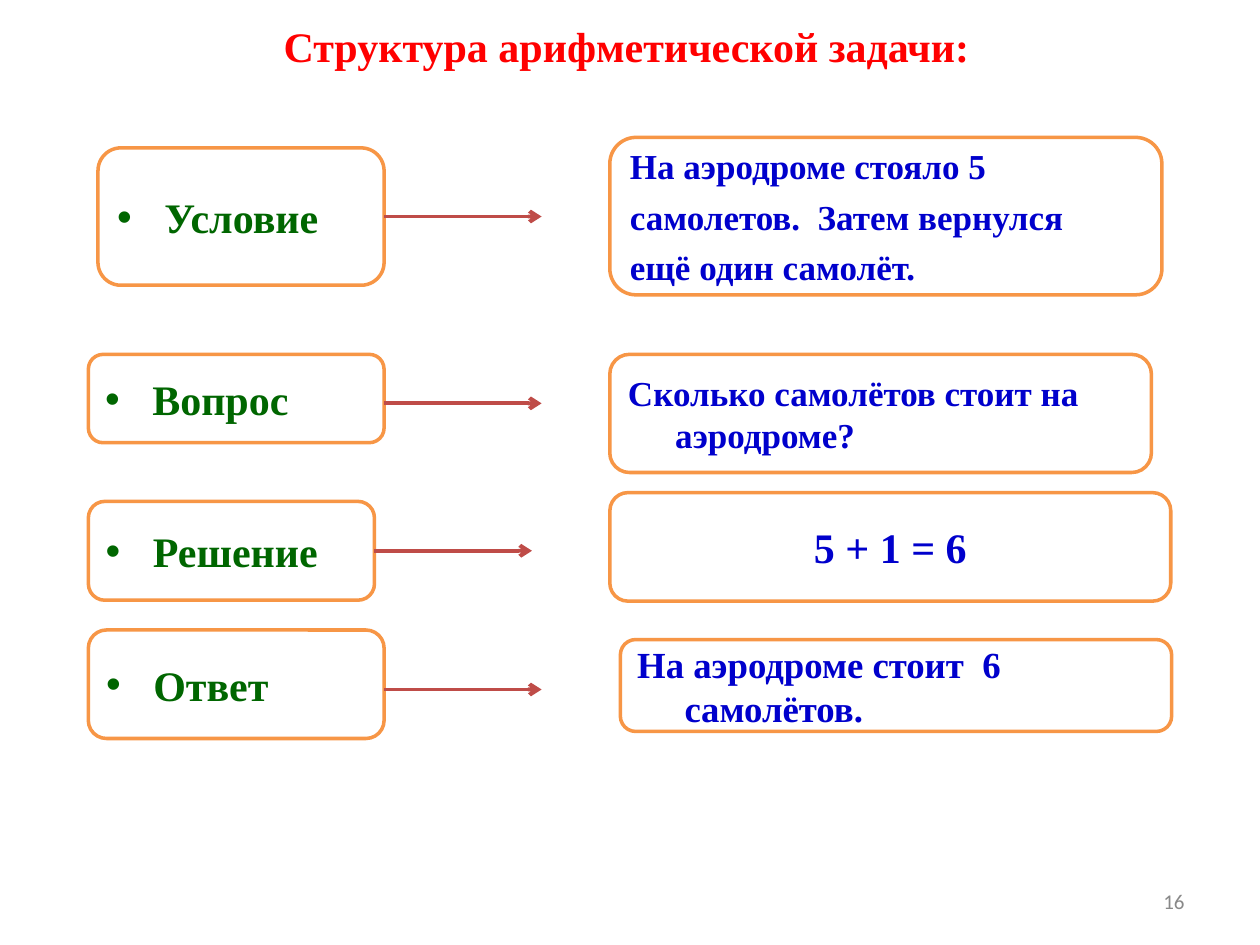
from lxml.etree import SubElement
from pptx import Presentation
from pptx.dml.color import RGBColor
from pptx.enum.shapes import MSO_CONNECTOR as Connector, MSO_SHAPE as Shape
from pptx.enum.text import MSO_ANCHOR as Anchor, PP_ALIGN as Align
from pptx.oxml.ns import qn
from pptx.util import Pt

SERIF = "Times New Roman"
GREEN, BLUE, RED = "006600", "0000CC", "FF0000"
ORANGE, BRICK, WHITE, GREY = "F79646", "BF4C48", "FFFFFF", "898989"
HANGING = 27
ARROW_LENGTH = 90

STEPS = [
    ("Условие", (56, 84.5, 163.5, 78.5), 123.75),
    ("Вопрос", (50.5, 202.5, 169, 50.5), 230.5),
    ("Решение", (50.5, 286.5, 163.5, 56.5), 314.75),
    ("Ответ", (50.5, 360, 169, 62), 394),
]
EXAMPLES = [
    ("На аэродроме стояло 5\nсамолетов.  Затем вернулся\nещё один самолёт.",
     (348.5, 78.5, 315.5, 90), 20, Align.LEFT),
    ("Сколько самолётов стоит на аэродроме?",
     (348.5, 202.5, 309.5, 67.5), 20, Align.LEFT),
    ("5 + 1 = 6", (348.5, 281.5, 320.5, 62), 24, Align.CENTER),
    ("На аэродроме стоит  6 самолётов.",
     (354.5, 365.5, 315, 52.5), 21, Align.LEFT),
]


def color(value):
    return RGBColor.from_string(value)


def points(lengths):
    return [Pt(length) for length in lengths]


def write(box, text, size, ink, align, font=SERIF, bold=True):
    frame = box.text_frame
    frame.word_wrap = True
    frame.vertical_anchor = Anchor.MIDDLE
    frame.text = text
    for para in frame.paragraphs:
        para.alignment = align
        for span in para.runs:
            span.font.name = font
            span.font.size = Pt(size)
            span.font.bold = bold
            span.font.color.rgb = color(ink)


def indent(para, bullet=False):
    properties = para._p.get_or_add_pPr()
    properties.set("marL", str(Pt(HANGING)))
    properties.set("indent", str(-Pt(HANGING)))
    if bullet:
        SubElement(properties, qn("a:buFont"), typeface="Arial")
        SubElement(properties, qn("a:buChar"), char="•")


def add_label(page, place, *style, **options):
    box = page.shapes.add_textbox(*points(place))
    write(box, *style, **options)


def add_card(page, place, text, size, ink, align=Align.LEFT, bullet=False):
    card = page.shapes.add_shape(Shape.ROUNDED_RECTANGLE, *points(place))
    card.shadow.inherit = False
    card.fill.solid()
    card.fill.fore_color.rgb = color(WHITE)
    card.line.color.rgb = color(ORANGE)
    card.line.width = Pt(2)
    write(card, text, size, ink, align)
    for number, para in enumerate(card.text_frame.paragraphs):
        indent(para, bullet)
        if number:
            para.space_before = Pt(5)
    return card


def add_arrow(page, card, place, level):
    left, top, width, height = place
    start = left + width
    arrow = page.shapes.add_connector(
        Connector.STRAIGHT, *points((start, level, start + ARROW_LENGTH, level)))
    if level == top + height / 2:
        arrow.begin_connect(card, 3)
    arrow.line.color.rgb = color(BRICK)
    arrow.line.width = Pt(2.25)
    SubElement(arrow.line._get_or_add_ln(), qn("a:tailEnd"), type="arrow")
    SubElement(arrow._element.spPr, qn("a:effectLst"))


def main():
    deck = Presentation()
    deck.slide_width, deck.slide_height = Pt(720), Pt(540)
    page = deck.slides.add_slide(deck.slide_layouts[6])
    add_label(page, (34, 0, 648, 52), "Структура арифметической задачи:",
              24, RED, Align.CENTER)
    for text, place, level in STEPS:
        card = add_card(page, place, text, 24, GREEN, bullet=True)
        add_arrow(page, card, place, level)
    for text, place, size, align in EXAMPLES:
        add_card(page, place, text, size, BLUE, align)
    add_label(page, (516, 500.5, 168, 29), "16", 12, GREY, Align.RIGHT,
              font="Calibri", bold=False)
    deck.save("out.pptx")


if __name__ == "__main__":
    main()
